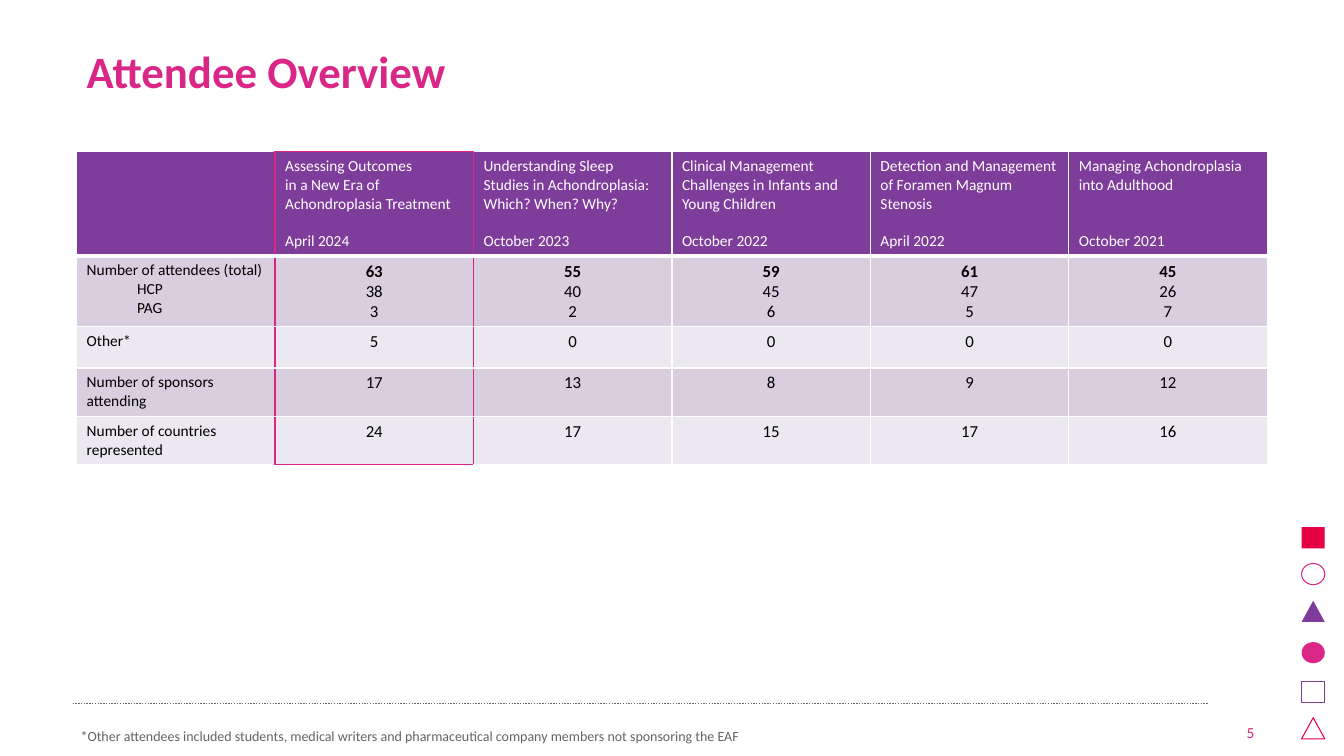
from lxml.etree import SubElement as Sub
from pptx import Presentation
from pptx.dml.color import RGBColor
from pptx.enum.dml import MSO_LINE as Dash
from pptx.enum.shapes import MSO_CONNECTOR as Conn, MSO_SHAPE as Shape
from pptx.enum.text import MSO_ANCHOR as Anchor, PP_ALIGN as Align
from pptx.oxml.ns import qn
from pptx.util import Inches, Pt

PINK, PURPLE, RED, GREY = "DA2686", "7E3C9B", "E50043", "646464"
WHITE, BLACK = "FFFFFF", "000000"
BANDS = ["D8CEDE", "ECE8EF"]
HEADS = [
    ("Assessing Outcomes\vin a New Era of\vAchondroplasia Treatment", "April 2024", 1),
    ("Understanding Sleep Studies in Achondroplasia: Which? When? Why?", "October 2023", 1),
    ("Clinical Management Challenges in Infants and Young Children", "October 2022", 1),
    ("Detection and Management of Foramen Magnum Stenosis", "April 2022", 1),
    ("Managing Achondroplasia into Adulthood", "October 2021", 2),
]
ROWS = [
    (["Number of attendees (total)", "HCP", "PAG"],
     [["63", "38", "3"], ["55", "40", "2"], ["59", "45", "6"],
      ["61", "47", "5"], ["45", "26", "7"]]),
    (["Other*"], [["5"], ["0"], ["0"], ["0"], ["0"]]),
    (["Number of sponsors attending"], [["17"], ["13"], ["8"], ["9"], ["12"]]),
    (["Number of countries represented"], [["24"], ["17"], ["15"], ["17"], ["16"]]),
]
HEIGHTS = [1.04, 0.7, 0.41, 0.48, 0.48]
NOTE = ("*Other attendees included students, medical writers and pharmaceutical "
        "company members not sponsoring the EAF")


def rgb(code):
    """Turn a hex string into a colour."""
    return RGBColor.from_string(code)


def place(item, box):
    """Move an item to a box given in inches."""
    item.left, item.top, item.width, item.height = map(Inches, box)


def write(frame, lines, size, color, align=Align.LEFT):
    """Fill a text frame with one paragraph per line."""
    frame.text = "\n".join(lines)
    for para in frame.paragraphs:
        para.alignment = align
        font = para.font
        font.name, font.size, font.color.rgb = "Calibri", Pt(size), rgb(color)
    return frame.paragraphs


def add_title(slide, box):
    """Place the slide title."""
    title = slide.shapes.title
    place(title, box)
    frame = title.text_frame
    frame.vertical_anchor = Anchor.MIDDLE
    para = write(frame, ["Attendee Overview"], 32, PINK)[0]
    para.font.bold, para.line_spacing = True, 0.9


def edge(cell, side, color, width):
    """Draw one border of a cell."""
    props = cell._tc.get_or_add_tcPr()
    line = Sub(props, qn("a:ln" + side), w=str(Pt(width)))
    fill = Sub(line, qn("a:solidFill"))
    Sub(fill, qn("a:srgbClr"), val=color)


def frame_cell(cell, row, col):
    """Border a cell, with pink around the newest meeting."""
    newest = col == 1
    edge(cell, "L", PINK if col in (1, 2) else WHITE, 1)
    edge(cell, "R", PINK if col in (0, 1) else WHITE, 1)
    edge(cell, "T", PINK if newest and row == 0 else WHITE, 1)
    edge(cell, "B", PINK if newest and row == len(ROWS) else WHITE, 1 if row else 3)
    cell.fill.solid()
    cell.fill.fore_color.rgb = rgb(BANDS[(row - 1) % 2] if row else PURPLE)


def add_grid(slide, box):
    """Build the attendee table."""
    size = len(ROWS) + 1, len(HEADS) + 1
    grid = slide.shapes.add_table(*size, *map(Inches, box)).table
    for col in grid.columns:
        col.width = Inches(box[2] / size[1])
    for row, high in zip(grid.rows, HEIGHTS):
        row.height = Inches(high)
    for r in range(size[0]):
        for c in range(size[1]):
            frame_cell(grid.cell(r, c), r, c)
    write(grid.cell(0, 0).text_frame, [""], 11, WHITE)
    for c, (topic, date, gap) in enumerate(HEADS, 1):
        paras = write(grid.cell(0, c).text_frame, [topic, date], 11, WHITE)
        for para in paras:
            para.font.bold = False
        paras[1].space_before = Pt(13.5 * gap)
    for r, (label, values) in enumerate(ROWS, 1):
        paras = write(grid.cell(r, 0).text_frame, label, 11, BLACK)
        for para in paras:
            para.font.bold = False
        for para in paras[1:]:
            para.level = 1
            para._p.get_or_add_pPr().set("marL", str(Inches(0.5)))
        for c, lines in enumerate(values, 1):
            paras = write(grid.cell(r, c).text_frame, lines, 12, BLACK, Align.CENTER)
            paras[0].font.bold = len(lines) > 1


def add_marks(slide, box):
    """Stack the six ornaments down the right edge."""
    left, top, wide, high = box
    marks = [(Shape.RECTANGLE, RED, True, 0), (Shape.OVAL, PINK, False, 0.36),
             (Shape.ISOSCELES_TRIANGLE, PURPLE, True, 0.73), (Shape.OVAL, PINK, True, 1.14),
             (Shape.RECTANGLE, PURPLE, False, 1.53),
             (Shape.ISOSCELES_TRIANGLE, RED, False, 1.89)]
    for kind, color, solid, down in marks:
        mark = slide.shapes.add_shape(kind, *map(Inches, (left, top + down, wide, high)))
        mark.shadow.inherit = False
        if solid:
            mark.fill.solid()
            mark.fill.fore_color.rgb = rgb(color)
            mark.line.fill.background()
        else:
            mark.fill.background()
            mark.line.color.rgb, mark.line.width = rgb(color), Pt(0.75)


def add_foot(slide, box):
    """Place the dotted rule, the footnote and the page number."""
    left, top, wide, high = box
    ends = map(Inches, (left + 0.02, top, left + 11.29, top))
    rule = slide.shapes.add_connector(Conn.STRAIGHT, *ends)
    rule.line.color.rgb, rule.line.width = rgb(GREY), Pt(1)
    rule.line.dash_style = Dash.ROUND_DOT
    Sub(rule._element.spPr, qn("a:effectLst"))
    note = slide.placeholders[1]
    place(note, (left, top, 11.26, high))
    note.text_frame.vertical_anchor = Anchor.BOTTOM
    para = write(note.text_frame, [NOTE], 10, GREY)[0]
    para.space_before = Pt(6)
    props = para._p.get_or_add_pPr()
    props.set("marL", "0")
    props.set("indent", "0")
    Sub(props, qn("a:buNone"))
    page = slide.shapes.add_textbox(*map(Inches, (left + wide - 0.58, top + 0.03, 0.58, 0.4)))
    page.text_frame.word_wrap = True
    page.text_frame.vertical_anchor = Anchor.BOTTOM
    write(page.text_frame, ["5"], 11, PINK, Align.RIGHT)


def main():
    """Build and save the slide."""
    deck = Presentation()
    deck.slide_width, deck.slide_height = Inches(13.33), Inches(7.5)
    slide = deck.slides.add_slide(deck.slide_layouts[1])
    add_marks(slide, (12.91, 5.23, 0.23, 0.21))
    add_title(slide, (0.76, 0.17, 11.81, 1.12))
    add_foot(slide, (0.7, 6.98, 11.84, 0.45))
    add_grid(slide, (0.76, 1.5, 11.81, sum(HEIGHTS)))
    deck.save("out.pptx")


if __name__ == "__main__":
    main()
